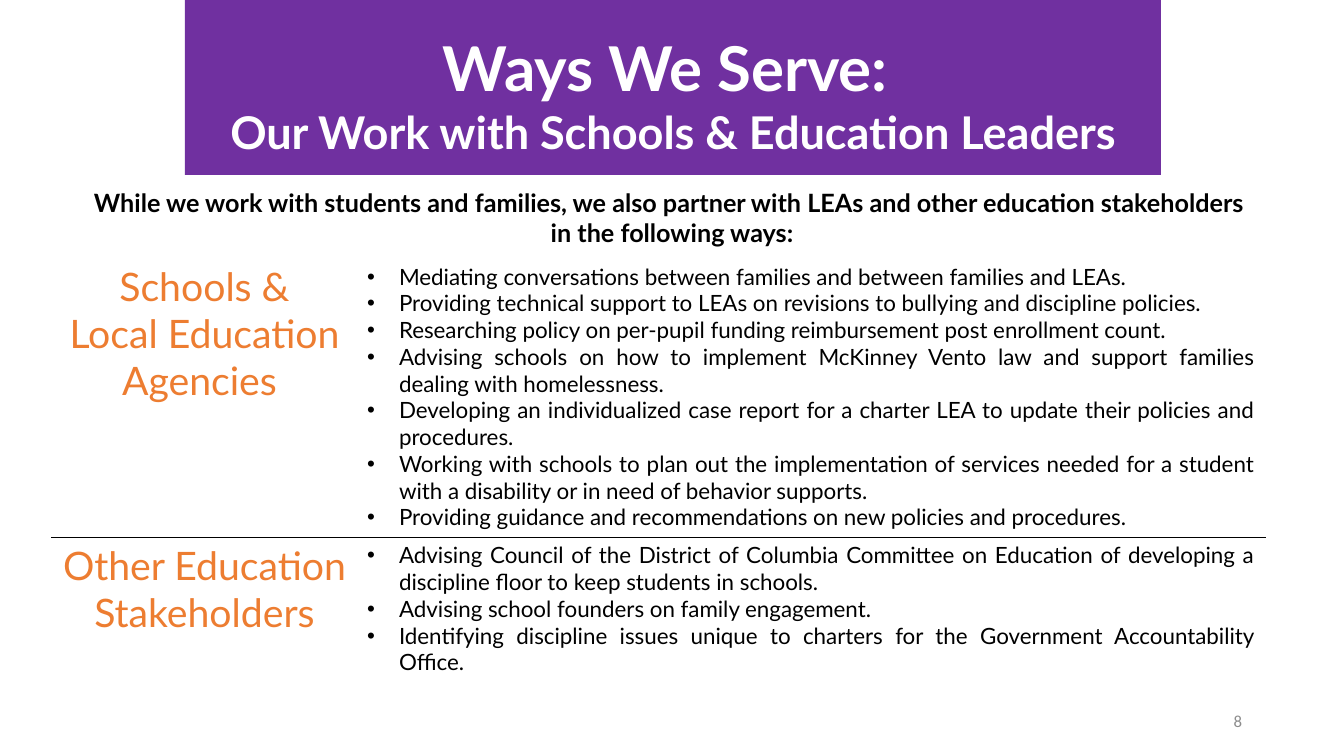
from pptx import Presentation
from pptx.dml.color import RGBColor
from pptx.enum.shapes import MSO_SHAPE
from pptx.enum.text import MSO_ANCHOR, PP_ALIGN
from pptx.oxml import parse_xml
from pptx.oxml.ns import nsdecls
from pptx.util import Pt

PX = 914400 / 100.8
PURPLE = RGBColor(0x70, 0x30, 0xA0)
ORANGE = RGBColor(0xED, 0x7D, 0x31)
GRAY = RGBColor(0x8C, 0x8C, 0x8C)
BLACK = RGBColor(0, 0, 0)
WHITE = RGBColor(255, 255, 255)


def px(*lengths):
    return [round(length * PX) for length in lengths]


def write(frame, lines, sizes, color, align, bold=False, font="Lato", bullet=False):
    frame.word_wrap = True
    for index, (line, size) in enumerate(zip(lines, sizes)):
        para = frame.paragraphs[0] if index == 0 else frame.add_paragraph()
        para.text = line
        para.alignment = align
        para.font.name = font
        para.font.size = Pt(size)
        para.font.bold = bold
        para.font.color.rgb = color
        if bullet:
            properties = para._p.get_or_add_pPr()
            indent = px(32)[0]
            properties.set("marL", str(indent))
            properties.set("indent", str(-indent))
            for mark in ('<a:buFont {} typeface="Arial"/>', '<a:buChar {} char="•"/>'):
                properties.insert_element_before(
                    parse_xml(mark.format(nsdecls("a"))), "a:tabLst", "a:defRPr", "a:extLst")


deck = Presentation()
deck.slide_width, deck.slide_height = px(1344, 756)
page = deck.slides.add_slide(deck.slide_layouts[6])

# Page number
number_box = page.shapes.add_textbox(*px(950, 701, 302, 40))
number_box.text_frame.vertical_anchor = MSO_ANCHOR.MIDDLE
write(number_box.text_frame, ["8"], [12], GRAY, PP_ALIGN.RIGHT, font="Calibri")

# Table of partners and the work done with them
partners = [
    (["Schools &", "Local Education", "Agencies\u00a0"], [
        "Mediating conversations between families and between families and LEAs.",
        "Providing technical support to LEAs on revisions to bullying and discipline policies.",
        "Researching policy on per-pupil funding reimbursement post enrollment count.",
        "Advising schools on how to implement McKinney Vento law and support families "
        "dealing with homelessness.",
        "Developing an individualized case report for a charter LEA to update their "
        "policies and procedures.",
        "Working with schools to plan out the implementation of services needed for a "
        "student with a disability or in need of behavior supports.",
        "Providing guidance and recommendations on new policies and procedures.",
    ]),
    (["Other Education", "Stakeholders"], [
        "Advising Council of the District of Columbia Committee on Education of developing "
        "a discipline floor to keep students in schools.",
        "Advising school founders on family engagement.",
        "Identifying discipline issues unique to charters for the Government "
        "Accountability Office.",
    ]),
]
table = page.shapes.add_table(2, 2, *px(52, 258, 1213, 396)).table
table.first_row = False
table.horz_banding = False
for column, width in zip(table.columns, px(305, 908)):
    column.width = width
for row, height in zip(table.rows, px(278, 118)):
    row.height = height

for row, (names, tasks), edge in zip(table.rows, partners, ("lnB", "lnT")):
    name_cell, task_cell = row.cells
    write(name_cell.text_frame, names, [28] * len(names), ORANGE, PP_ALIGN.CENTER)
    write(task_cell.text_frame, tasks, [16] * len(tasks), BLACK, PP_ALIGN.JUSTIFY, bullet=True)
    for cell in row.cells:
        cell.fill.background()
        # The two rows share one thin rule
        cell._tc.get_or_add_tcPr().insert(0, parse_xml(
            f'<a:{edge} {nsdecls("a")} w="3175"><a:solidFill><a:srgbClr val="{BLACK}"/>'
            f'</a:solidFill></a:{edge}>'))

# Title banner
banner = page.shapes.add_shape(MSO_SHAPE.RECTANGLE, *px(185, 0, 976, 175))
banner.shadow.inherit = False
banner.fill.solid()
banner.fill.fore_color.rgb = PURPLE
banner.line.fill.background()
banner.text_frame.vertical_anchor = MSO_ANCHOR.TOP
banner.text_frame.margin_top = px(30)[0]
write(banner.text_frame, ["Ways We Serve: ", "Our Work with Schools & Education Leaders"],
      [44.1, 32.2], WHITE, PP_ALIGN.CENTER, bold=True)

# Introduction
intro_box = page.shapes.add_textbox(*px(0, 182, 1344, 72))
write(intro_box.text_frame,
      ["While we work with students and families, we also partner with LEAs and other "
       "education stakeholders ", "in the following ways:"],
      [18, 18], BLACK, PP_ALIGN.CENTER, bold=True)

deck.save("out.pptx")
